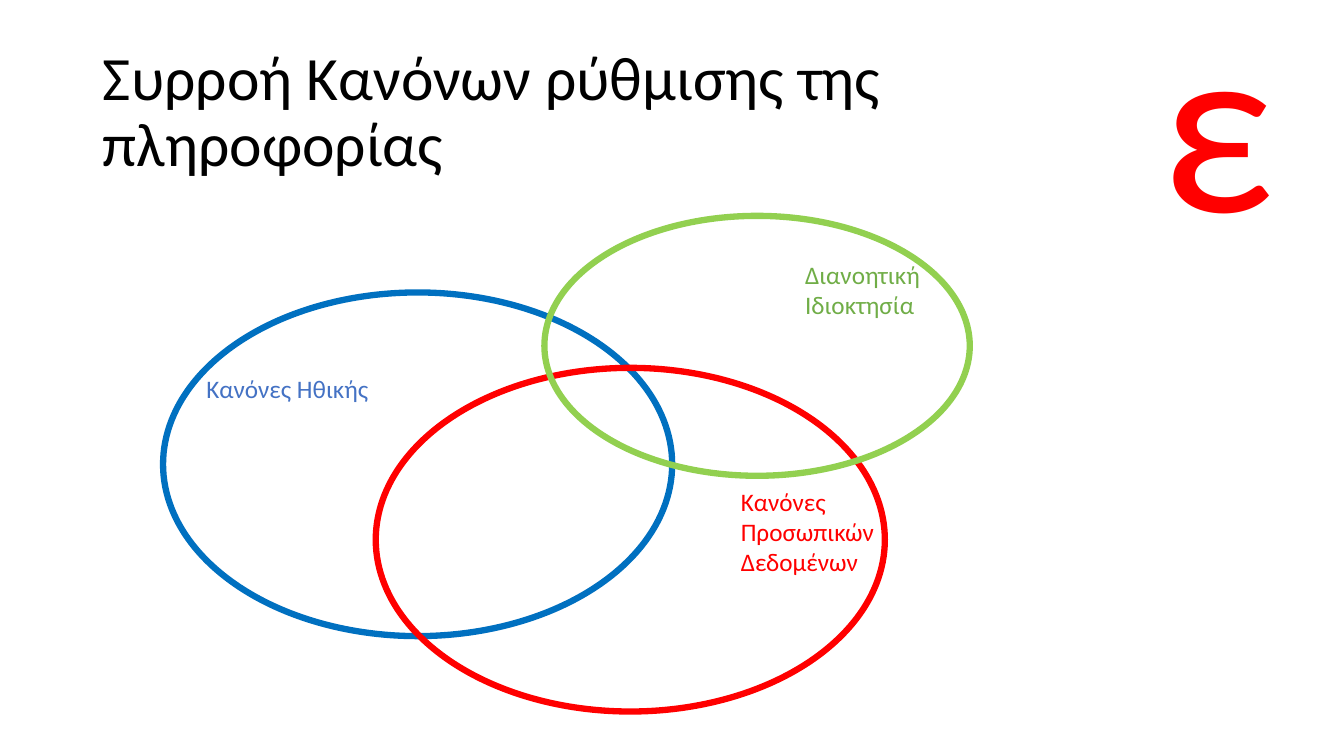
from pptx import Presentation
from pptx import util as u
from pptx.dml.color import RGBColor
from pptx.enum import shapes, text

BLACK = RGBColor(0x00, 0x00, 0x00)
RED = RGBColor(0xFF, 0x00, 0x00)
BLUE = RGBColor(0x00, 0x70, 0xC0)
INK = RGBColor(0x44, 0x72, 0xC4)
LIME = RGBColor(0x92, 0xD0, 0x50)
GREEN = RGBColor(0x70, 0xAD, 0x47)


def style(frame, size, color):
    for para in frame.paragraphs:
        para.font.name = "Calibri"
        para.font.size = u.Pt(size)
        para.font.color.rgb = color


def label(slide, box, words, size, color, wrap=True):
    frame = slide.shapes.add_textbox(*map(u.Cm, box)).text_frame
    frame.word_wrap = wrap
    frame.auto_size = text.MSO_AUTO_SIZE.SHAPE_TO_FIT_TEXT
    frame.text = words
    style(frame, size, color)
    return frame


def head(slide, box, words):
    title = slide.shapes.title
    title.left, title.top, title.width, title.height = map(u.Cm, box)
    frame = title.text_frame
    frame.text = words
    frame.word_wrap = True
    frame.auto_size = text.MSO_AUTO_SIZE.NONE
    frame.vertical_anchor = text.MSO_ANCHOR.MIDDLE
    para = frame.paragraphs[0]
    para.alignment = text.PP_ALIGN.LEFT
    para.line_spacing = 0.9
    style(frame, 44, BLACK)


def mark(slide, box, sign):
    frame = label(slide, box, sign, 177.2, RED, False)
    frame.vertical_anchor = text.MSO_ANCHOR.MIDDLE
    frame.margin_left = frame.margin_right = u.Cm(0.1)
    frame.margin_top = frame.margin_bottom = u.Cm(0.1)


def ring(slide, box, edge, words, color, inset, wrap=True):
    oval = slide.shapes.add_shape(shapes.MSO_SHAPE.OVAL, *map(u.Cm, box))
    oval.shadow.inherit = False
    oval.fill.background()
    oval.line.color.rgb = edge
    oval.line.width = u.Pt(4.5)
    x, y, w, h = inset
    label(slide, (box[0] + x, box[1] + y, w, h), words, 18, color, wrap)


def main():
    deck = Presentation()
    deck.slide_width, deck.slide_height = u.Cm(33.87), u.Cm(19.05)
    slide = deck.slides.add_slide(deck.slide_layouts[5])
    head(slide, (2.34, 1.02, 26.82, 3.68),
         "Συρροή Κανόνων ρύθμισης της πληροφορίας")
    mark(slide, (29.16, -1.04, 3.07, 7.77), "ε")
    ring(slide, (4.11, 7.37, 12.83, 8.66), BLUE,
         "Κανόνες Ηθικής", INK, (0.84, 1.9, 4.65, 1.02), False)
    ring(slide, (9.47, 9.27, 12.83, 8.66), RED,
         "Κανόνες Προσωπικών Δεδομένων", RED, (8.95, 2.85, 4.52, 2.57))
    ring(slide, (13.72, 5.44, 10.72, 6.55), LIME,
         "Διανοητική\nΙδιοκτησία", GREEN, (6.32, 0.96, 4.52, 1.8))
    deck.save("out.pptx")


if __name__ == "__main__":
    main()
